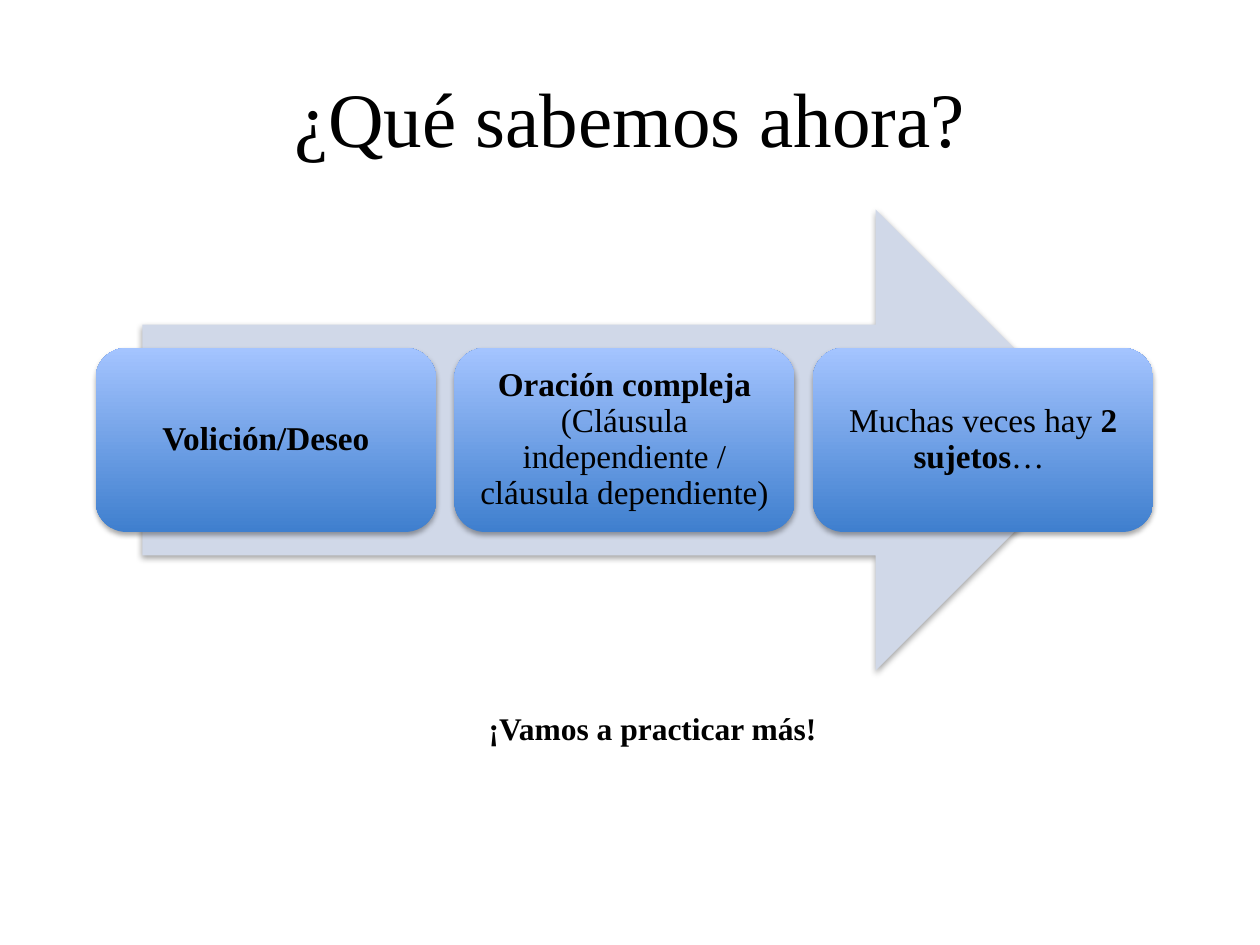
from lxml import etree
from pptx import Presentation
from pptx.dml.color import RGBColor
from pptx.enum.shapes import MSO_SHAPE as Kind
from pptx.enum.text import MSO_ANCHOR as Anchor, PP_ALIGN as Align
from pptx.oxml.ns import qn
from pptx.util import Cm, Pt

TITLE = "¿Qué sabemos ahora?"
CLOSE = "¡Vamos a practicar más!"
# Each step is a list of (text, bold) runs.
STEPS = [
    [("Volición/Deseo", True)],
    [("Oración compleja ", True),
     ("(Cláusula independiente / cláusula dependiente)", False)],
    [("Muchas veces hay ", False), ("2 sujetos", True), ("… ", False)],
]
FONT = "Times New Roman"
COLORS = {"text": "000000", "arrow": "D0D8E8", "low": "3F7FCE",
          "high": "A4C4FF", "shade": "000000"}

ARROW = (2.87, 4.22, 19.43, 9.3)
LEFT, WIDE, HIGH, GAP = 1.93, 6.86, 3.71, 0.37
TOP = ARROW[1] + (ARROW[3] - HIGH) / 2


def color(name):
    return RGBColor.from_string(COLORS[name])


def write(frame, runs, size, align):
    frame.word_wrap = True
    para = frame.paragraphs[0]
    para.alignment = align
    para.font.name, para.font.size = FONT, Pt(size)
    para.font.color.rgb = color("text")
    for text, bold in runs:
        run = para.add_run()
        run.text, run.font.bold = text, bold
    return para


def add_shape(slide, kind, area):
    """Add a borderless shape with a soft shadow below it."""
    shape = slide.shapes.add_shape(kind, *map(Cm, area))
    shape.line.fill.background()
    shape.shadow.inherit = False
    effects = shape.element.spPr.find(qn("a:effectLst"))
    shade = etree.SubElement(effects, qn("a:outerShdw"), blurRad="40000",
                             dist="23000", dir="5400000", rotWithShape="0")
    tint = etree.SubElement(shade, qn("a:srgbClr"), val=COLORS["shade"])
    etree.SubElement(tint, qn("a:alpha"), val="35000")
    return shape


def add_step(slide, area, runs):
    box = add_shape(slide, Kind.ROUNDED_RECTANGLE, area)
    box.fill.gradient()
    box.fill.gradient_angle = 90
    for stop, name in zip(box.fill.gradient_stops, ("low", "high")):
        stop.color.rgb = color(name)
    frame = box.text_frame
    frame.margin_left = frame.margin_right = Cm(0.2)
    frame.margin_top = frame.margin_bottom = Cm(0.2)
    frame.vertical_anchor = Anchor.MIDDLE
    write(frame, runs, 19, Align.CENTER).line_spacing = 0.9


def main():
    deck = Presentation()
    deck.slide_width, deck.slide_height = Cm(25.4), Cm(19.05)
    slide = deck.slides.add_slide(deck.slide_layouts[6])

    title = slide.shapes.add_textbox(Cm(1.27), Cm(0.76), Cm(22.86), Cm(3.18))
    title.text_frame.vertical_anchor = Anchor.MIDDLE
    write(title.text_frame, [(TITLE, False)], 44, Align.CENTER)

    arrow = add_shape(slide, Kind.RIGHT_ARROW, ARROW)
    arrow.fill.solid()
    arrow.fill.fore_color.rgb = color("arrow")
    for i, runs in enumerate(STEPS):
        add_step(slide, (LEFT + i * (WIDE + GAP), TOP, WIDE, HIGH), runs)

    close = slide.shapes.add_textbox(Cm(9.6), Cm(14.17), Cm(9.17), Cm(1.02))
    write(close.text_frame, [(CLOSE, True)], 18, Align.LEFT)

    deck.save("out.pptx")


if __name__ == "__main__":
    main()
